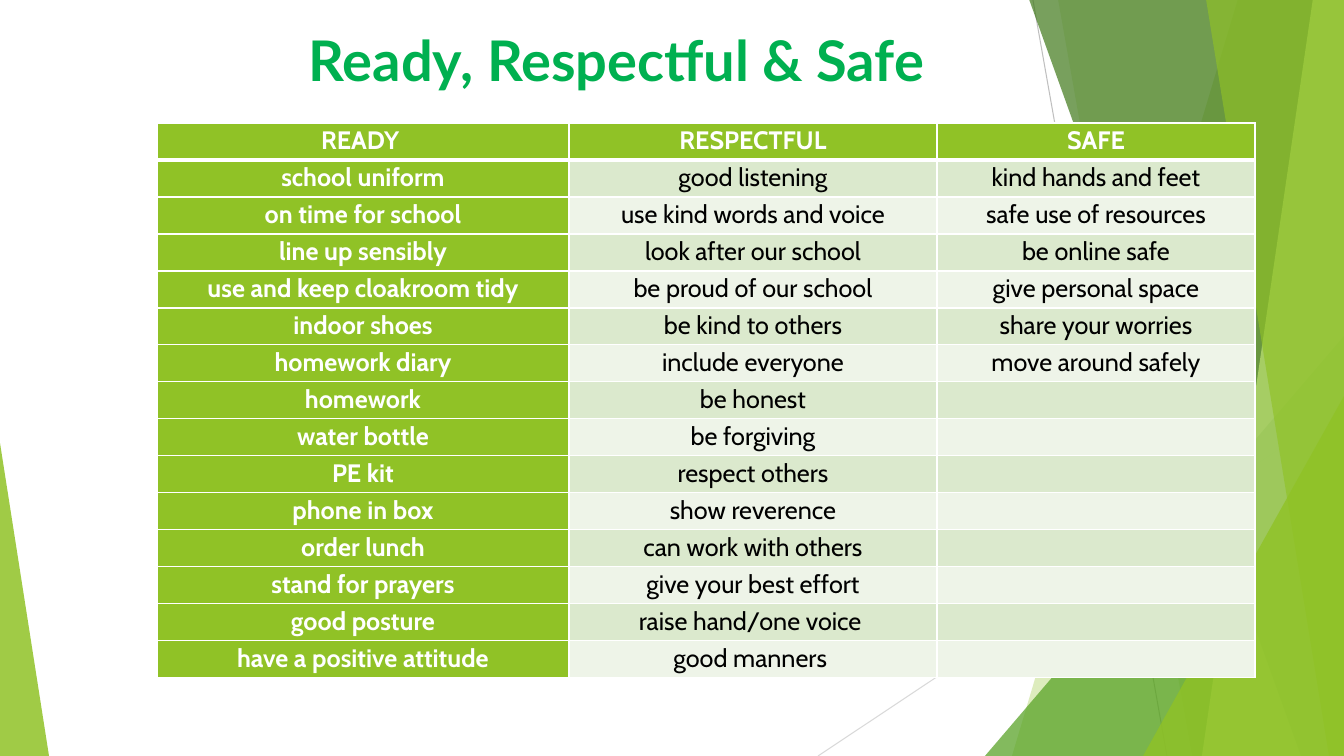
from lxml import etree
from pptx import Presentation
from pptx.dml.color import RGBColor
from pptx.enum.shapes import MSO_CONNECTOR, MSO_SHAPE
from pptx.enum.text import MSO_AUTO_SIZE, PP_ALIGN
from pptx.oxml.ns import qn
from pptx.util import Pt

PX = 914400 / 100.8
STRAIGHT = MSO_CONNECTOR.STRAIGHT
TRIANGLE = MSO_SHAPE.ISOSCELES_TRIANGLE
CENTER = PP_ALIGN.CENTER
GROW = MSO_AUTO_SIZE.SHAPE_TO_FIT_TEXT
GREEN = "90C226"
WHITE = "FFFFFF"


def px(*lengths):
    return [round(length * PX) for length in lengths]


def rgb(value):
    return RGBColor.from_string(value)


prs = Presentation()
prs.slide_width, prs.slide_height = px(1344, 756)
slide = prs.slides.add_slide(prs.slide_layouts[6])
shapes = slide.shapes

for ends, color in [((1033, 0, 1167, 756), "BFBFBF"), ((1344, 406, 818, 756), "D9D9D9")]:
    ray = shapes.add_connector(STRAIGHT, *px(*ends))
    ray.line.color.rgb = rgb(color)
    ray.line.width = Pt(0.75)
    etree.SubElement(ray._element.spPr, qn("a:effectLst"))

facets = [
    ("band", (1238, 1012), GREEN, 30),
    ("band", (1058, 1192), GREEN, 20),
    ("triangle", (985, 336, 359, 420, 1), "54A021", 72),
    ("band", (1029, 1301), "3F7819", 70),
    ("band", (1313, 1202), "C0E474", 70),
    ("band", (1206, 1329), GREEN, 65),
    ("triangle", (1143, 396, 201, 360, 1), GREEN, 80),
    ("triangle", (0, 443, 49, 313, 0), GREEN, 85),
]
for kind, place, color, opacity in facets:
    if kind == "band":
        top_x, bottom_x = place
        outline = shapes.build_freeform(top_x, -1, scale=PX)
        outline.add_line_segments([(1344, -1), (1344, 756), (bottom_x, 756)], close=True)
        facet = outline.convert_to_shape()
    else:
        *box, apex = place
        facet = shapes.add_shape(TRIANGLE, *px(*box))
        facet.adjustments[0] = apex
    facet.shadow.inherit = False
    facet.line.fill.background()
    facet.fill.solid()
    facet.fill.fore_color.rgb = rgb(color)
    fill_color = facet._element.spPr.find(qn("a:solidFill"))[0]
    etree.SubElement(fill_color, qn("a:alpha"), val=str(opacity * 1000))

expectations = [
    ("READY ", "RESPECTFUL", "SAFE"),
    ("school uniform", "good listening", "kind hands and feet"),
    ("on time for school", "use kind words and voice", "safe use of resources"),
    ("line up sensibly", "look after our school", "be online safe"),
    ("use and keep cloakroom tidy", "be proud of our school", "give personal space"),
    ("indoor shoes", "be kind to others", "share your worries"),
    ("homework diary", "include everyone", "move around safely"),
    ("homework", "be honest", ""),
    ("water bottle", "be forgiving", ""),
    ("PE kit", "respect others", ""),
    ("phone in box", "show reverence", ""),
    ("order lunch", "can work with others", ""),
    ("stand for prayers", "give your best effort", ""),
    ("good posture", "raise hand/one voice ", ""),
    ("have a positive attitude", "good manners ", ""),
]
row_height = 37
column_widths = px(412, 368, 318)
row_count = len(expectations)
table = shapes.add_table(row_count, 3, *px(157, 123, 1098, row_height * row_count)).table
for column, width in zip(table.columns, column_widths):
    column.width = width
for row in table.rows:
    row.height = px(row_height)[0]

margins = dict(zip(("margin_left", "margin_top", "margin_right", "margin_bottom"), px(7, 0, 7, 0)))
for r, texts in enumerate(expectations):
    for c, text in enumerate(texts):
        cell = table.cell(r, c)
        for margin, value in margins.items():
            setattr(cell, margin, value)
        strong = r == 0 or c == 0
        borders = {"L": 1, "R": 1, "T": 3 if r == 1 else 1, "B": 3 if r == 0 else 1}
        for side, points in borders.items():
            edge = etree.SubElement(cell._tc.get_or_add_tcPr(), qn(f"a:ln{side}"), w=str(Pt(points)))
            edge_fill = etree.SubElement(edge, qn("a:solidFill"))
            etree.SubElement(edge_fill, qn("a:srgbClr"), val=WHITE)
        cell.fill.solid()
        cell.fill.fore_color.rgb = rgb(GREEN if strong else "DBE9CD" if r % 2 else "EEF4E8")
        if text:
            entry = cell.text_frame.paragraphs[0]
            entry.alignment = CENTER
            entry.line_spacing = 1.07
            words = entry.add_run()
            words.text = text
            for name, value in {"name": "Cabin", "size": Pt(18), "bold": strong}.items():
                setattr(words.font, name, value)
            words.font.color.rgb = rgb(WHITE if strong else "000000")

heading = shapes.add_textbox(*px(130, 21, 973, 78)).text_frame
heading.word_wrap = True
heading.auto_size = GROW
heading.paragraphs[0].alignment = CENTER
title = heading.paragraphs[0].add_run()
title.text = "Ready, Respectful & Safe"
for name, value in {"name": "Lato", "size": Pt(40), "bold": True}.items():
    setattr(title.font, name, value)
title.font.color.rgb = rgb("00B050")

prs.save("out.pptx")
